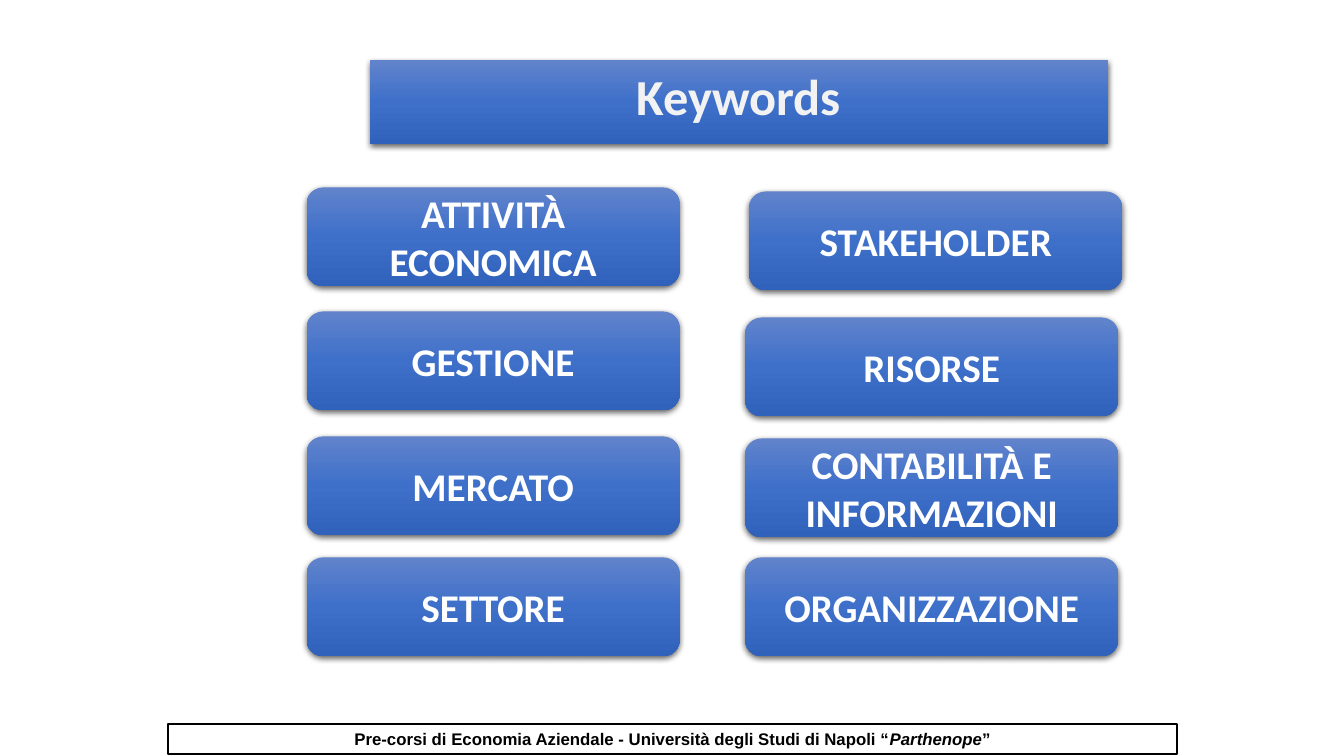
from copy import deepcopy

from lxml import etree
from pptx import Presentation
from pptx.dml.color import RGBColor
from pptx.enum.shapes import MSO_SHAPE
from pptx.enum.text import MSO_ANCHOR, MSO_AUTO_SIZE, PP_ALIGN
from pptx.oxml.ns import qn
from pptx.util import Inches, Pt

RECTANGLE, ROUNDED = MSO_SHAPE.RECTANGLE, MSO_SHAPE.ROUNDED_RECTANGLE
TOP, MIDDLE = MSO_ANCHOR.TOP, MSO_ANCHOR.MIDDLE
GROW, FIXED = MSO_AUTO_SIZE.SHAPE_TO_FIT_TEXT, MSO_AUTO_SIZE.NONE
CENTER = PP_ALIGN.CENTER

WIDTH, HEIGHT = Inches(13.33), Inches(7.5)
COLORS = {
    "light": "6183CB", "mid": "3E70CA", "deep": "3062BB",
    "heading": "F2F2F2", "white": "FFFFFF", "black": "000000",
}
GRADIENT = ("light", "mid", "deep")
HEADING_FONT = {"name": "Calibri", "size": Pt(36), "bold": True}
KEYWORD_FONT = {"name": "Calibri", "size": Pt(28), "bold": True}
FOOTER_FONT = {"name": "Arial", "size": Pt(12), "bold": True}

KEYWORD_SIZE = (27.76, 13.07)
LEFT, RIGHT, RIGHT_NUDGED = 22.81, 55.44, 55.74
KEYWORDS = [
    ("ATTIVITÀ ECONOMICA", LEFT, 24.8),
    ("GESTIONE", LEFT, 41.2),
    ("MERCATO", LEFT, 57.73),
    ("SETTORE", LEFT, 73.73),
    ("STAKEHOLDER", RIGHT_NUDGED, 25.33),
    ("RISORSE", RIGHT, 42),
    ("CONTABILITÀ E INFORMAZIONI", RIGHT, 58),
    ("ORGANIZZAZIONE", RIGHT, 73.73),
]
FOOTER = [
    ("Pre-corsi di Economia Aziendale - Università degli Studi di Napoli “", False),
    ("Parthenope", True),
    ("”", False),
]


def rgb(color):
    """Return the named colour."""
    return RGBColor.from_string(COLORS[color])


def area(left, top, width, height):
    """Turn percentages of the slide into left, top, width and height."""
    return [round(share * side / 100) for share, side in
            zip((left, top, width, height), (WIDTH, HEIGHT, WIDTH, HEIGHT))]


def apply(target, formats):
    """Set every attribute named in formats on target."""
    for attribute, value in formats.items():
        setattr(target, attribute, value)


def write(shape, runs, font, color, anchor, auto_size):
    """Write centred (text, italic) runs into a shape."""
    frame = shape.text_frame
    apply(frame, {"word_wrap": True, "vertical_anchor": anchor, "auto_size": auto_size})
    paragraph = frame.paragraphs[0]
    paragraph.alignment = CENTER
    for text, italic in runs:
        run = paragraph.add_run()
        run.text = text
        apply(run.font, {**font, "italic": italic})
        run.font.color.rgb = rgb(color)


def emboss(shape):
    """Give a shape the blue gradient and the soft shadow below it."""
    shape.fill.gradient()
    shape.fill.gradient_angle = 270
    stops = shape.fill._fill._gradFill.find(qn("a:gsLst"))
    stops.insert(1, deepcopy(stops[0]))
    for index, (stop, color) in enumerate(zip(shape.fill.gradient_stops, GRADIENT)):
        stop.position = index / 2
        stop.color.rgb = rgb(color)
    shape.line.fill.background()
    shape.shadow.inherit = False
    effects = shape._element.spPr.find(qn("a:effectLst"))
    shadow = etree.SubElement(effects, qn("a:outerShdw"), blurRad=str(Pt(4.5)),
                              dist=str(Pt(1.5)), dir="5400000", algn="ctr", rotWithShape="0")
    tint = etree.SubElement(shadow, qn("a:srgbClr"), val=COLORS["black"])
    etree.SubElement(tint, qn("a:alpha"), val="63000")


def add_heading(slide, text):
    """Turn the title placeholder into the heading banner."""
    heading = slide.shapes.title
    apply(heading, dict(zip(("left", "top", "width", "height"), area(27.53, 8, 54.91, 9.47))))
    emboss(heading)
    write(heading, [(text, False)], HEADING_FONT, "heading", TOP, GROW)


def add_keyword(slide, word, left, top):
    """Add one rounded keyword card."""
    card = slide.shapes.add_shape(ROUNDED, *area(left, top, *KEYWORD_SIZE))
    emboss(card)
    write(card, [(word, False)], KEYWORD_FONT, "white", MIDDLE, FIXED)


def add_footer(slide, runs):
    """Add the outlined course line at the bottom."""
    footer = slide.shapes.add_shape(RECTANGLE, *area(12.53, 95.73, 75.02, 4))
    footer.fill.background()
    footer.line.color.rgb = rgb("black")
    footer.line.width = Pt(1.5)
    footer.shadow.inherit = False
    write(footer, runs, FOOTER_FONT, "black", TOP, GROW)


def main():
    """Build the keyword slide and save it."""
    deck = Presentation()
    apply(deck, {"slide_width": WIDTH, "slide_height": HEIGHT})
    slide = deck.slides.add_slide(deck.slide_layouts.get_by_name("Title Only"))
    add_heading(slide, "Keywords")
    for word, left, top in KEYWORDS:
        add_keyword(slide, word, left, top)
    add_footer(slide, FOOTER)
    deck.save("out.pptx")


if __name__ == "__main__":
    main()
